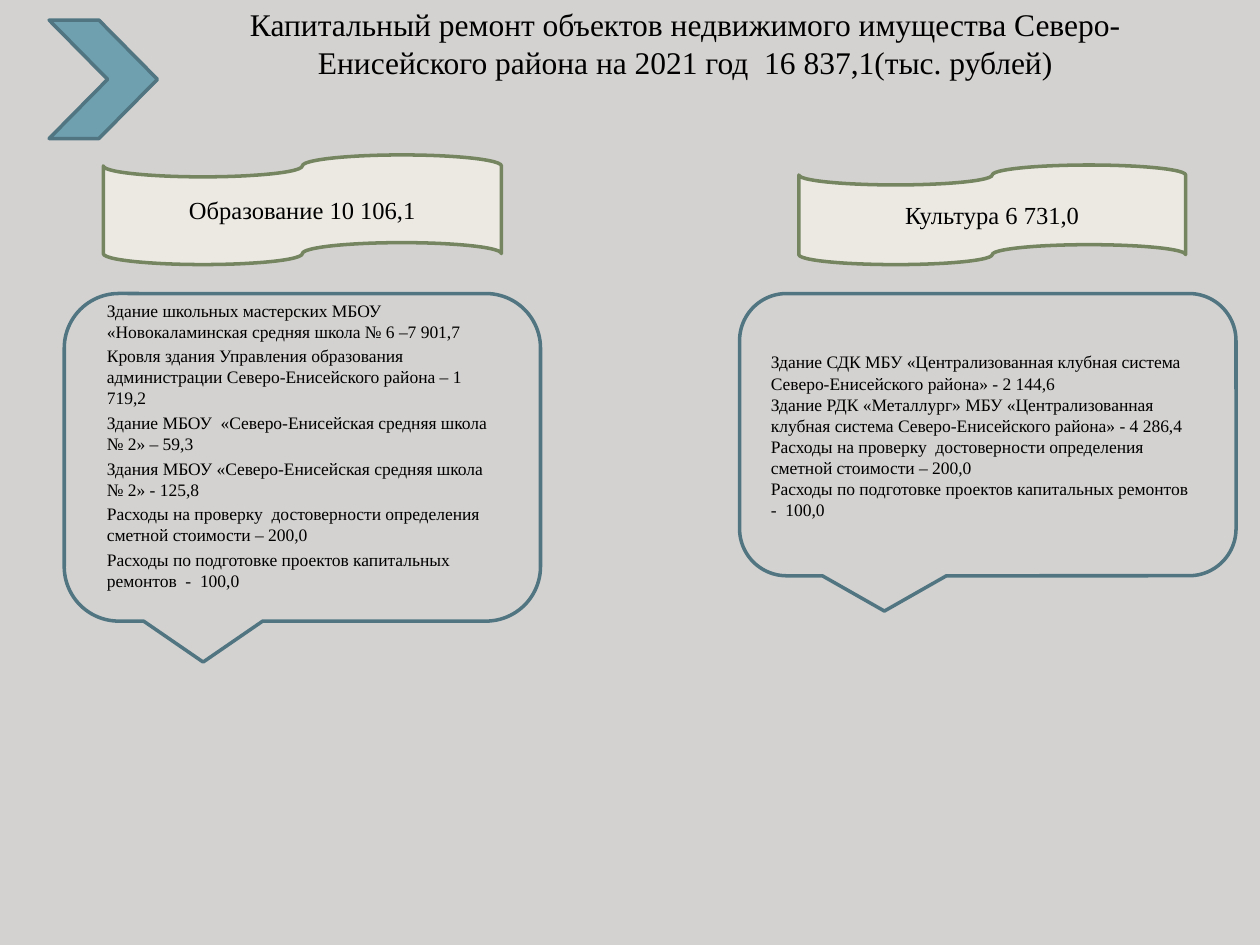
from dataclasses import dataclass

import pptx
import pptx.dml.color
import pptx.enum.shapes
import pptx.enum.text
import pptx.util

Inches = pptx.util.Inches
Pt = pptx.util.Pt
RGB = pptx.dml.color.RGBColor
Shape = pptx.enum.shapes.MSO_SHAPE
Align = pptx.enum.text.PP_ALIGN
Anchor = pptx.enum.text.MSO_ANCHOR


@dataclass(frozen=True)
class Theme:
    font: str = "Times New Roman"
    background: RGB = RGB(0xD4, 0xD2, 0xD0)
    text: RGB = RGB(0, 0, 0)
    teal: RGB = RGB(0x6E, 0xA0, 0xB0)
    teal_line: RGB = RGB(0x51, 0x76, 0x82)
    banner: RGB = RGB(0xEC, 0xE9, 0xE3)
    banner_line: RGB = RGB(0x74, 0x85, 0x60)
    line_width: Pt = Pt(2)
    title_size: Pt = Pt(18)
    banner_size: Pt = Pt(14)
    body_size: Pt = Pt(10)


@dataclass(frozen=True)
class Box:
    left: float
    top: float
    width: float
    height: float

    def lengths(self) -> list[Inches]:
        return [Inches(v) for v in (self.left, self.top, self.width, self.height)]


@dataclass(frozen=True)
class Sector:
    heading: str
    works: list[str]
    banner: Box
    callout: Box
    body: Box
    space_before: Pt


THEME = Theme()
TITLE = ("Капитальный ремонт объектов недвижимого имущества "
         "Северо-Енисейского района на 2021 год  16 837,1(тыс. рублей)")
SHARED_WORKS = [
    "Расходы на проверку  достоверности определения сметной стоимости – 200,0",
    "Расходы по подготовке проектов капитальных ремонтов  -  100,0",
]
SECTORS = [
    Sector(
        "Образование 10 106,1",
        [
            "Здание школьных мастерских МБОУ «Новокаламинская средняя школа № 6 –7 901,7",
            "Кровля здания Управления образования администрации "
            "Северо-Енисейского района – 1 719,2",
            "Здание МБОУ  «Северо-Енисейская средняя школа № 2» – 59,3",
            "Здания МБОУ «Северо-Енисейская средняя школа № 2» - 125,8",
            *SHARED_WORKS,
        ],
        banner=Box(0.82, 1.23, 3.16, 0.87),
        callout=Box(0.51, 2.33, 3.78, 2.6),
        body=Box(0.75, 2.33, 3.31, 2.44),
        space_before=Pt(2),
    ),
    Sector(
        "Культура 6 731,0",
        [
            "Здание СДК МБУ «Централизованная клубная система "
            "Северо-Енисейского района» - 2 144,6",
            "Здание РДК «Металлург» МБУ «Централизованная клубная система "
            "Северо-Енисейского района» - 4 286,4",
            *SHARED_WORKS,
        ],
        banner=Box(6.34, 1.31, 3.07, 0.79),
        callout=Box(5.87, 2.33, 3.94, 2.24),
        body=Box(6.02, 2.74, 3.54, 1.45),
        space_before=Pt(0),
    ),
]


def write(sp, lines: list[str], size: Pt, align=Align.LEFT,
          anchor=Anchor.TOP, space_before: Pt = Pt(0)) -> None:
    """Fill a shape or text box with one paragraph per line."""
    tf = sp.text_frame
    tf.word_wrap = True
    tf.vertical_anchor = anchor
    for i, line in enumerate(lines):
        p = tf.add_paragraph() if i else tf.paragraphs[0]
        p.alignment = align
        p.space_before = space_before
        r = p.add_run()
        r.text = line
        r.font.name = THEME.font
        r.font.size = size
        r.font.color.rgb = THEME.text


def add_outlined(s, kind, box: Box, line: RGB, fill: RGB | None = None):
    """Add a preset shape; without a fill colour it stays see-through."""
    sp = s.shapes.add_shape(kind, *box.lengths())
    sp.shadow.inherit = False
    sp.line.color.rgb = line
    sp.line.width = THEME.line_width
    if fill is None:
        sp.fill.background()
    else:
        sp.fill.solid()
        sp.fill.fore_color.rgb = fill
    return sp


def add_sector(s, sector: Sector) -> None:
    banner = add_outlined(s, Shape.FLOWCHART_PUNCHED_TAPE, sector.banner,
                          THEME.banner_line, THEME.banner)
    write(banner, [sector.heading], THEME.banner_size, Align.CENTER, Anchor.MIDDLE)
    add_outlined(s, Shape.ROUNDED_RECTANGULAR_CALLOUT, sector.callout, THEME.teal_line)
    body = s.shapes.add_textbox(*sector.body.lengths())
    write(body, sector.works, THEME.body_size, space_before=sector.space_before)


def main() -> None:
    prs = pptx.Presentation()
    prs.slide_width, prs.slide_height = Inches(10), Inches(7.5)
    s = prs.slides.add_slide(prs.slide_layouts[6])
    s.background.fill.solid()
    s.background.fill.fore_color.rgb = THEME.background

    title = s.shapes.add_textbox(*Box(1.38, 0.05, 8.12, 0.58).lengths())
    write(title, [TITLE], THEME.title_size, Align.CENTER, Anchor.MIDDLE)
    chevron = add_outlined(s, Shape.CHEVRON, Box(0.39, 0.16, 0.86, 0.94),
                           THEME.teal_line, THEME.teal)
    chevron.adjustments[0] = 0.54
    for sector in SECTORS:
        add_sector(s, sector)
    prs.save("out.pptx")


if __name__ == "__main__":
    main()
